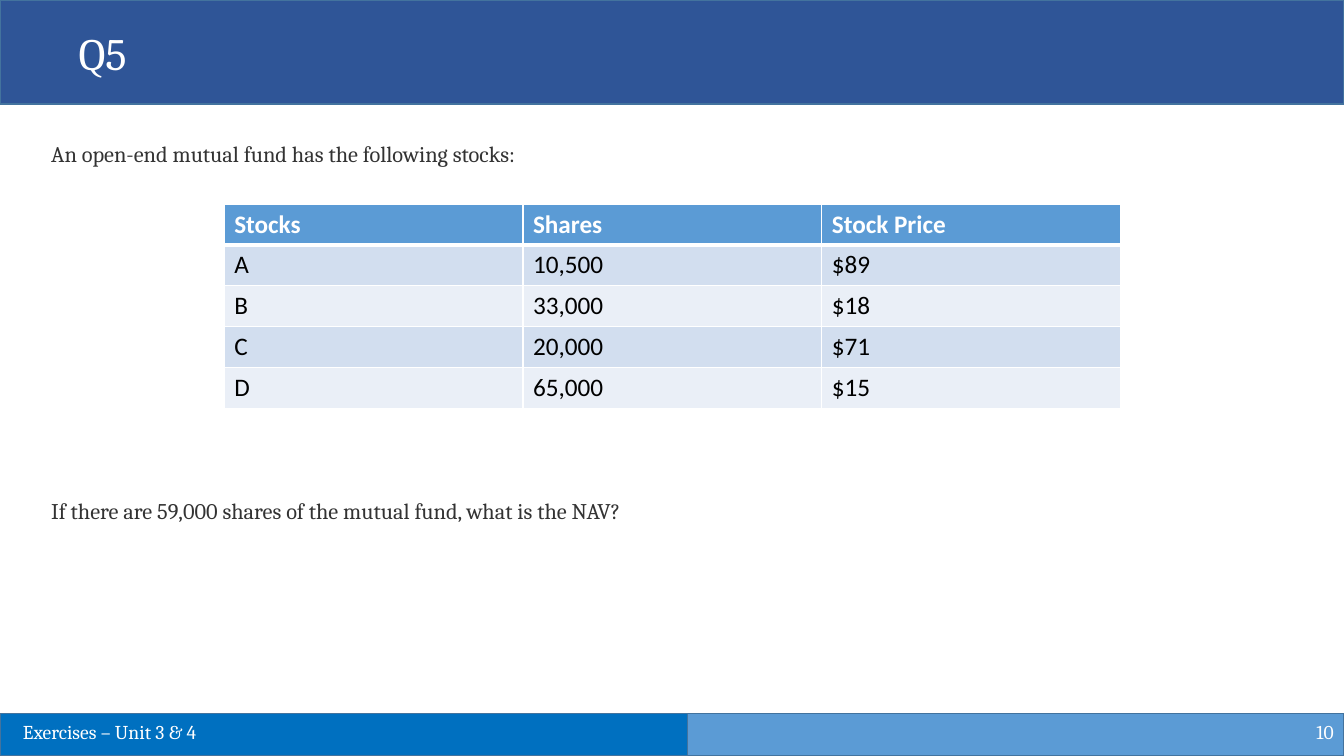
"""Build the Q5 exercise slide on the net asset value of a mutual fund."""
from dataclasses import dataclass

from lxml.etree import SubElement
from pptx import Presentation
from pptx.dml.color import RGBColor
from pptx.enum.shapes import MSO_SHAPE as Shape
from pptx.enum.text import MSO_ANCHOR as Anchor, PP_ALIGN as Align
from pptx.oxml.ns import qn
from pptx.slide import Slide
from pptx.table import _Cell as Cell
from pptx.text.text import TextFrame
from pptx.util import Cm, Pt

WHITE = RGBColor(0xFF, 0xFF, 0xFF)
BLACK = RGBColor(0x00, 0x00, 0x00)
CHARCOAL = RGBColor(0x33, 0x33, 0x33)
NAVY = RGBColor(0x2F, 0x55, 0x97)
OUTLINE = RGBColor(0x43, 0x73, 0x9E)
BLUE = RGBColor(0x00, 0x70, 0xC0)
SKY = RGBColor(0x5B, 0x9B, 0xD5)
BAND_DARK = RGBColor(0xD2, 0xDE, 0xEF)
BAND_LIGHT = RGBColor(0xEA, 0xEF, 0xF7)

WIDTH, HEIGHT = 33.87, 19.05
FOOTER_TOP, FOOTER_HEIGHT, FOOTER_SPLIT = 17.98, 1.07, 17.32
COLUMN_WIDTH, ROW_HEIGHT = 7.53, 1.03
STOCKS = [
    ("Stocks", "Shares", "Stock Price"),
    ("A", "10,500", "$89"),
    ("B", "33,000", "$18"),
    ("C", "20,000", "$71"),
    ("D", "65,000", "$15"),
]


@dataclass(frozen=True)
class Area:
    left: float
    top: float
    width: float
    height: float

    def lengths(self) -> tuple[Cm, Cm, Cm, Cm]:
        return Cm(self.left), Cm(self.top), Cm(self.width), Cm(self.height)


@dataclass(frozen=True)
class Bar:
    area: Area
    color: RGBColor


BARS = [
    Bar(Area(0, 0, WIDTH, 2.62), NAVY),
    Bar(Area(0, FOOTER_TOP, FOOTER_SPLIT, FOOTER_HEIGHT), BLUE),
    Bar(Area(FOOTER_SPLIT, FOOTER_TOP, WIDTH - FOOTER_SPLIT, FOOTER_HEIGHT), SKY),
]


def write(frame: TextFrame, text: str, *, size: float, color: RGBColor = WHITE,
          font: str = "Cambria", bold: bool = False, align: Align = Align.LEFT,
          before: float = 0, after: float = 0) -> None:
    para = frame.add_paragraph() if frame.text else frame.paragraphs[0]
    para.alignment = align
    para.space_before, para.space_after = Pt(before), Pt(after)
    span = para.add_run()
    span.text = text
    span.font.name, span.font.size, span.font.bold = font, Pt(size), bold
    span.font.color.rgb = color


def add_bar(page: Slide, bar: Bar) -> None:
    box = page.shapes.add_shape(Shape.RECTANGLE, *bar.area.lengths())
    box.shadow.inherit = False
    box.fill.solid()
    box.fill.fore_color.rgb = bar.color
    box.line.color.rgb = OUTLINE
    box.line.width = Pt(1)


def add_text_area(page: Slide, area: Area, anchor: Anchor = Anchor.TOP) -> TextFrame:
    frame = page.shapes.add_textbox(*area.lengths()).text_frame
    frame.word_wrap = True
    frame.vertical_anchor = anchor
    return frame


def add_borders(cell: Cell, top: float, bottom: float) -> None:
    properties = cell._tc.get_or_add_tcPr()
    for side, width in (("L", 1), ("R", 1), ("T", top), ("B", bottom)):
        line = SubElement(properties, qn(f"a:ln{side}"), w=str(Pt(width)))
        fill = SubElement(line, qn("a:solidFill"))
        SubElement(fill, qn("a:srgbClr"), val=str(WHITE))


def add_stock_table(page: Slide) -> None:
    rows, columns = len(STOCKS), len(STOCKS[0])
    area = Area(5.65, 5.14, COLUMN_WIDTH * columns, ROW_HEIGHT * rows)
    table = page.shapes.add_table(rows, columns, *area.lengths()).table
    for column in table.columns:
        column.width = Cm(COLUMN_WIDTH)
    for index, values in enumerate(STOCKS):
        table.rows[index].height = Cm(ROW_HEIGHT)
        header = index == 0
        band = SKY if header else BAND_DARK if index % 2 else BAND_LIGHT
        for position, value in enumerate(values):
            cell = table.cell(index, position)
            add_borders(cell, top=3 if index == 1 else 1, bottom=3 if header else 1)
            cell.fill.solid()
            cell.fill.fore_color.rgb = band
            write(cell.text_frame, value, size=18, font="Calibri", bold=header,
                  color=WHITE if header else BLACK)


def main() -> None:
    deck = Presentation()
    deck.slide_width, deck.slide_height = Cm(WIDTH), Cm(HEIGHT)
    page = deck.slides.add_slide(deck.slide_layouts[6])
    for bar in BARS:
        add_bar(page, bar)

    write(add_text_area(page, Area(1.73, 0.53, 30.68, 1.63)), "Q5", size=32)

    question = add_text_area(page, Area(1.04, 3.4, 31.98, 14.48))
    write(question, "An open-end mutual fund has the following stocks:",
          size=16, color=CHARCOAL, align=Align.JUSTIFY, after=2)
    write(question, "If there are 59,000 shares of the mutual fund, what is the NAV?",
          size=16, color=CHARCOAL, align=Align.JUSTIFY, before=234, after=2)

    number = add_text_area(page, Area(26.24, 17.93, 7.62, 1.02), Anchor.MIDDLE)
    write(number, "10", size=14, align=Align.RIGHT)
    footer = add_text_area(page, Area(0.33, 18.01, 14.07, 0.86))
    write(footer, "Exercises – Unit 3 & 4", size=14)

    add_stock_table(page)
    deck.save("out.pptx")


if __name__ == "__main__":
    main()
